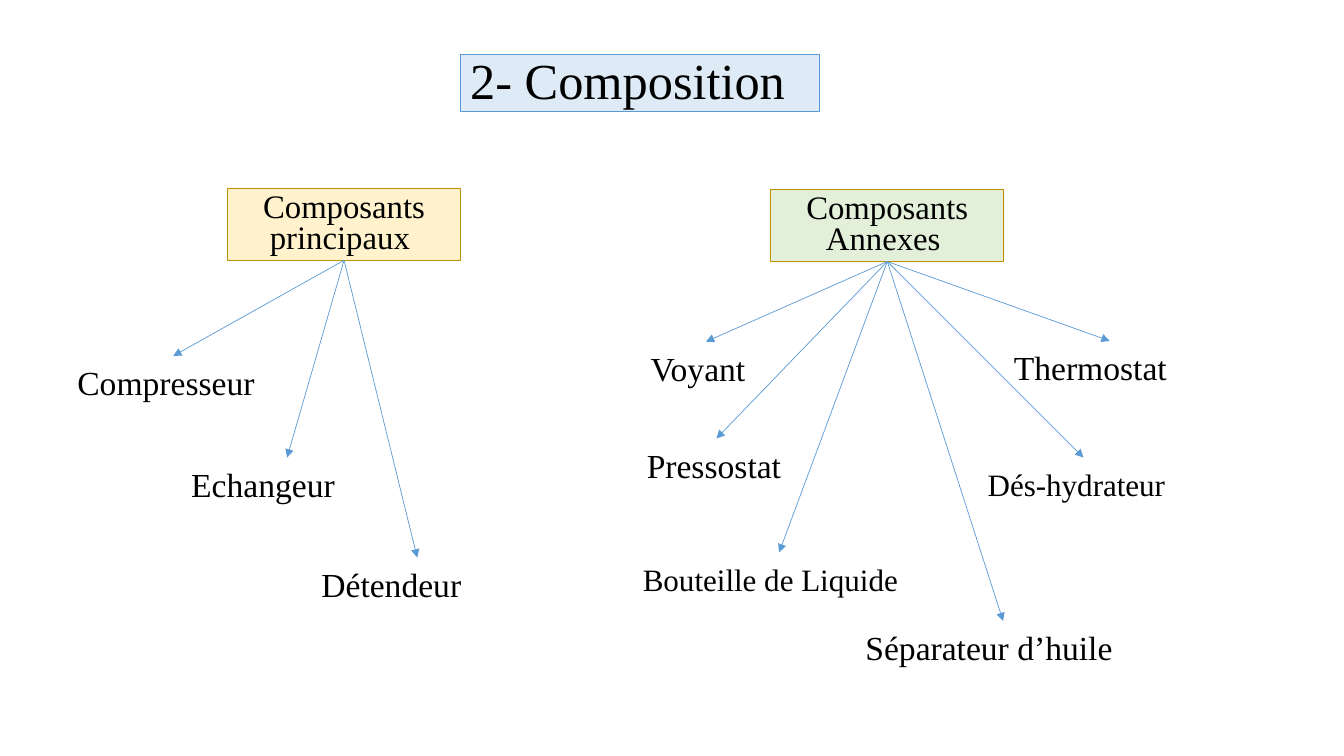
import dataclasses

import lxml.etree
import pptx
import pptx.dml.color
import pptx.enum.shapes
import pptx.enum.text
import pptx.oxml.ns
import pptx.util

Cm, Pt = pptx.util.Cm, pptx.util.Pt
Align = pptx.enum.text.PP_ALIGN
Rgb = pptx.dml.color.RGBColor.from_string
qn = pptx.oxml.ns.qn


@dataclasses.dataclass(frozen=True)
class Theme:
    font: str = "Times New Roman"
    ink: str = "000000"
    blue: str = "5B9BD5"
    gold: str = "BF9000"
    sky: str = "DEEBF7"
    cream: str = "FFF2CC"
    mint: str = "E2F0D9"
    title: float = 36
    head: float = 23.4
    label: float = 24
    small: float = 22.2


class Board:
    """Draws styled boxes, labels and arrows on one slide."""

    def __init__(self, slide, theme):
        self.shapes = slide.shapes
        self.theme = theme

    def letter(self, shape, text, size, align, pitch):
        frame = shape.text_frame
        frame.word_wrap = True
        frame.vertical_anchor = pptx.enum.text.MSO_ANCHOR.MIDDLE
        para = frame.paragraphs[0]
        para.text = text
        para.alignment = align
        para.line_spacing = pitch
        para.font.name = self.theme.font
        para.font.size = Pt(size)
        para.font.color.rgb = Rgb(self.theme.ink)

    def box(self, text, area, fill, edge, size, align, pitch):
        kind = pptx.enum.shapes.MSO_SHAPE.RECTANGLE
        shape = self.shapes.add_shape(kind, *map(Cm, area))
        shape.shadow.inherit = False
        shape.fill.solid()
        shape.fill.fore_color.rgb = Rgb(fill)
        shape.line.color.rgb = Rgb(edge)
        shape.line.width = Pt(0.75)
        self.letter(shape, text, size, align, pitch)
        return shape

    def label(self, text, left, top, width, size):
        shape = self.shapes.add_textbox(Cm(left), Cm(top), Cm(width), Cm(1.45))
        self.letter(shape, text, size, Align.LEFT, 0.9)
        return shape

    def arrow(self, start, end):
        kind = pptx.enum.shapes.MSO_CONNECTOR.STRAIGHT
        link = self.shapes.add_connector(kind, 0, 0, 0, 0)
        link.begin_connect(start, 2)
        link.end_connect(end, 0)
        link.line.color.rgb = Rgb(self.theme.blue)
        link.line.width = Pt(0.5)
        props = link.element.spPr
        line = props.find(qn("a:ln"))
        lxml.etree.SubElement(line, qn("a:tailEnd"), type="triangle")
        lxml.etree.SubElement(props, qn("a:effectLst"))

    def group(self, text, left, top, fill, parts):
        area = (left, top, 5.86, 1.81)
        head = self.box(text, area, fill, self.theme.gold,
                        self.theme.head, Align.CENTER, 0.8)
        for part in parts:
            self.arrow(head, self.label(*part))


def main():
    deck = pptx.Presentation()
    deck.slide_width, deck.slide_height = Cm(33.87), Cm(19.05)
    theme = Theme()
    board = Board(deck.slides.add_slide(deck.slide_layouts[6]), theme)
    board.box("2- Composition", (11.6, 1.37, 9.05, 1.45), theme.sky,
              theme.blue, theme.title, Align.LEFT, 0.9)
    board.group("Composants principaux ", 5.74, 4.75, theme.cream, [
        ("Compresseur", 1.7, 8.97, 5.33, theme.label),
        ("Echangeur", 4.57, 11.53, 5.33, theme.label),
        ("Détendeur", 7.85, 14.05, 5.33, theme.label),
    ])
    board.group("Composants Annexes ", 19.43, 4.78, theme.mint, [
        ("Voyant", 16.15, 8.61, 3.28, theme.label),
        ("Pressostat", 16.05, 11.05, 4.01, theme.label),
        ("Bouteille de Liquide", 15.95, 13.92, 7.37, theme.small),
        ("Séparateur d’huile", 21.56, 15.65, 7.44, theme.label),
        ("Dés-hydrateur", 24.64, 11.53, 5.33, theme.small),
        ("Thermostat", 25.3, 8.59, 5.33, theme.label),
    ])
    deck.save("out.pptx")


if __name__ == "__main__":
    main()
